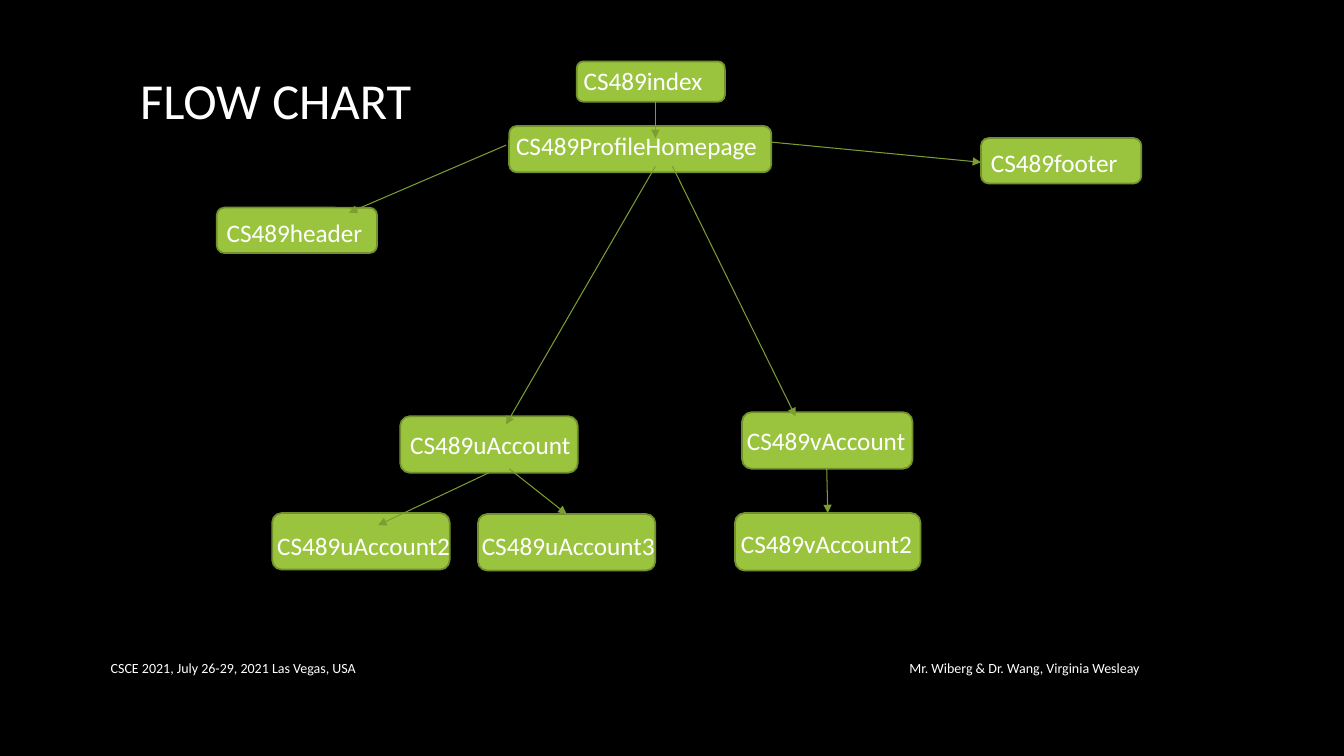
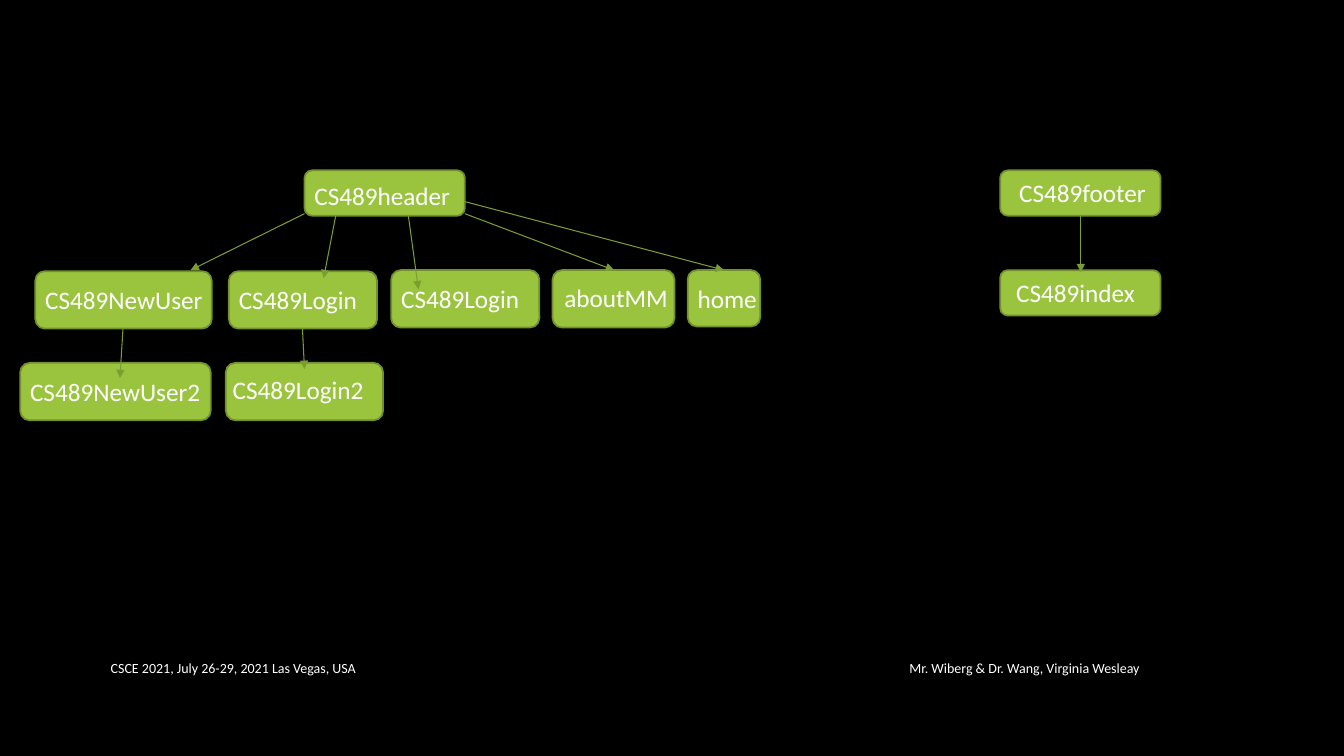
from dataclasses import dataclass
from typing import Any, NamedTuple

import pptx
import pptx.dml.color
import pptx.enum.shapes
import pptx.enum.text
import pptx.oxml
import pptx.oxml.ns
import pptx.util

Inches = pptx.util.Inches
RGB = pptx.dml.color.RGBColor
Align = pptx.enum.text.PP_ALIGN
Anchor = pptx.enum.text.MSO_ANCHOR


@dataclass(frozen=True)
class Theme:
    background: RGB = RGB.from_string("000000")
    text: RGB = RGB.from_string("FFFFFF")
    box: RGB = RGB.from_string("9AC43E")
    outline: RGB = RGB.from_string("72912E")
    arrow: RGB = RGB.from_string("7B9D32")
    font: str = "Calibri"
    title_size: float = 36
    label_size: float = 18
    footer_size: float = 10
    outline_width: float = 1.25
    arrow_width: float = 0.75


THEME = Theme()


class Area(NamedTuple):
    left: float
    top: float
    width: float
    height: float

    def lengths(self) -> list[int]:
        return [Inches(value) for value in self]


class Page(NamedTuple):
    """One page of the program, with its label offset from the box corner."""
    label: str
    box: Area
    shift: tuple[float, float]
    label_width: float = 3.21


class Link(NamedTuple):
    start: tuple[float, float]
    end: tuple[float, float]


class FooterPart(NamedTuple):
    text: str
    area: Area
    align: Align


LABEL_HEIGHT = 0.4

FOOTER = [
    FooterPart("Mr. Wiberg & Dr. Wang, Virginia Wesleay",
               Area(8.4, 6.43, 3, 0.4), Align.RIGHT),
    FooterPart("CSCE 2021, July 26-29, 2021 Las Vegas, USA",
               Area(1, 6.43, 7.3, 0.4), Align.LEFT),
]

SITE_PAGES = [
    Page("CS489ProfileHomepage", Area(5.05, 1.25, 2.6, 0.46), (-0.03, -0.01), 3.12),
    Page("CS489header", Area(2.15, 2.06, 1.59, 0.45), (0, 0.05), 2.6),
    Page("CS489footer", Area(9.73, 1.37, 1.59, 0.45), (0, 0.04), 2.6),
    Page("CS489index", Area(5.72, 0.61, 1.47, 0.4), (-0.03, -0.01), 3.12),
    Page("CS489uAccount", Area(3.97, 4.13, 1.76, 0.56), (0, 0.08)),
    Page("CS489vAccount", Area(7.36, 4.09, 1.69, 0.56), (-0.05, 0.08)),
    Page("CS489vAccount2", Area(7.29, 5.09, 1.84, 0.57), (-0.04, 0.1)),
    Page("CS489uAccount2", Area(2.7, 5.09, 1.76, 0.56), (-0.05, 0.12)),
    Page("CS489uAccount3", Area(4.74, 5.1, 1.76, 0.56), (-0.06, 0.11)),
]
SITE_LINKS = [
    Link((6.5, 1), (6.5, 1.37)),
    Link((5.02, 1.44), (3.46, 2.11)),
    Link((7.65, 1.41), (9.73, 1.61)),
    Link((6.5, 1.65), (5.02, 4.21)),
    Link((6.67, 1.65), (7.89, 4.13)),
    Link((4.85, 4.69), (3.75, 5.21)),
    Link((5.05, 4.65), (5.62, 5.1)),
    Link((8.2, 4.65), (8.21, 5.09)),
]

HEADER_FOOTER_PAGES = [
    Page("CS489header", Area(3.02, 1.69, 1.59, 0.45), (0, 0.05), 2.6),
    Page("CS489NewUser", Area(0.35, 2.69, 1.75, 0.57), (0, 0.08)),
    Page("CS489NewUser2", Area(0.2, 3.6, 1.89, 0.57), (0, 0.08), 3.12),
    Page("CS489Login", Area(2.27, 2.69, 1.47, 0.57), (0, 0.08)),
    Page("CS489Login2", Area(2.24, 3.6, 1.56, 0.57), (-0.03, 0.06)),
    Page("home", Area(6.82, 2.68, 0.72, 0.56), (0, 0.08)),
    Page("CS489Login", Area(3.88, 2.68, 1.47, 0.57), (0, 0.08)),
    Page("aboutMM", Area(5.48, 2.68, 1.21, 0.57), (0.02, 0.07), 1.34),
    Page("CS489footer", Area(9.92, 1.69, 1.59, 0.45), (0.09, 0.02), 1.53),
    Page("CS489index", Area(9.92, 2.68, 1.59, 0.45), (0.06, 0.02), 1.48),
]
HEADER_FOOTER_LINKS = [
    Link((3.02, 2.12), (1.89, 2.68)),
    Link((3.33, 2.14), (3.21, 2.76)),
    Link((4.05, 2.14), (4.15, 2.87)),
    Link((1.22, 3.26), (1.19, 3.75)),
    Link((3, 3.26), (3.02, 3.66)),
    Link((4.61, 2.12), (6.09, 2.68)),
    Link((4.61, 2), (7.18, 2.68)),
    Link((10.72, 2.14), (10.72, 2.7)),
]


def apply_format(target: Any, values: dict[str, Any]) -> None:
    for attribute, value in values.items():
        setattr(target, attribute, value)


def write_text(frame: Any, text: str, size: float, align: Align = Align.LEFT,
               anchor: Anchor = Anchor.TOP) -> None:
    apply_format(frame, {"text": text, "word_wrap": True, "vertical_anchor": anchor})
    paragraph = frame.paragraphs[0]
    paragraph.alignment = align
    run_font = paragraph.runs[0].font
    apply_format(run_font, {"name": THEME.font, "size": pptx.util.Pt(size)})
    run_font.color.rgb = THEME.text


def style_line(line: Any, color: RGB, width: float) -> None:
    line.color.rgb = color
    line.width = pptx.util.Pt(width)


def add_page(slide: Any, page: Page) -> None:
    box = slide.shapes.add_shape(
        pptx.enum.shapes.MSO_SHAPE.FLOWCHART_ALTERNATE_PROCESS, *page.box.lengths())
    box.shadow.inherit = False
    box.fill.solid()
    box.fill.fore_color.rgb = THEME.box
    style_line(box.line, THEME.outline, THEME.outline_width)

    label_area = Area(page.box.left + page.shift[0], page.box.top + page.shift[1],
                      page.label_width, LABEL_HEIGHT)
    label = slide.shapes.add_textbox(*label_area.lengths())
    write_text(label.text_frame, page.label, THEME.label_size)


def add_link(slide: Any, link: Link) -> None:
    ends = [Inches(value) for value in (*link.start, *link.end)]
    arrow = slide.shapes.add_connector(
        pptx.enum.shapes.MSO_CONNECTOR.STRAIGHT, *ends)
    style_line(arrow.line, THEME.arrow, THEME.arrow_width)
    outline = arrow.line._get_or_add_ln()
    outline.append(pptx.oxml.parse_xml(
        f'<a:tailEnd {pptx.oxml.ns.nsdecls("a")} type="triangle"/>'))
    outline.addnext(pptx.oxml.parse_xml(
        f'<a:effectLst {pptx.oxml.ns.nsdecls("a")}/>'))


def add_chart_slide(deck: Any, layout: int, pages: list[Page],
                    links: list[Link]) -> Any:
    """Add a slide with its boxes, arrows and the shared footer."""
    slide = deck.slides.add_slide(deck.slide_layouts[layout])
    for page in pages:
        add_page(slide, page)
    for link in links:
        add_link(slide, link)
    for part in FOOTER:
        note = slide.shapes.add_textbox(*part.area.lengths())
        write_text(note.text_frame, part.text, THEME.footer_size,
                   part.align, Anchor.MIDDLE)
    return slide


def set_title(slide: Any, text: str, area: Area) -> None:
    title = slide.shapes.title
    apply_format(title, dict(zip(area._fields, area.lengths())))
    write_text(title.text_frame, text, THEME.title_size, Align.CENTER, Anchor.MIDDLE)
    title.text_frame.paragraphs[0].line_spacing = 0.9


def main() -> None:
    deck = pptx.Presentation()
    apply_format(deck, {"slide_width": Inches(13.33), "slide_height": Inches(7.5)})
    backdrop = deck.slide_master.background.fill
    backdrop.solid()
    backdrop.fore_color.rgb = THEME.background

    site = add_chart_slide(deck, 5, SITE_PAGES, SITE_LINKS)
    set_title(site, "FLOW CHART", Area(1, 0.46, 3.47, 1.13))
    add_chart_slide(deck, 6, HEADER_FOOTER_PAGES, HEADER_FOOTER_LINKS)
    deck.save("out.pptx")


if __name__ == "__main__":
    main()
